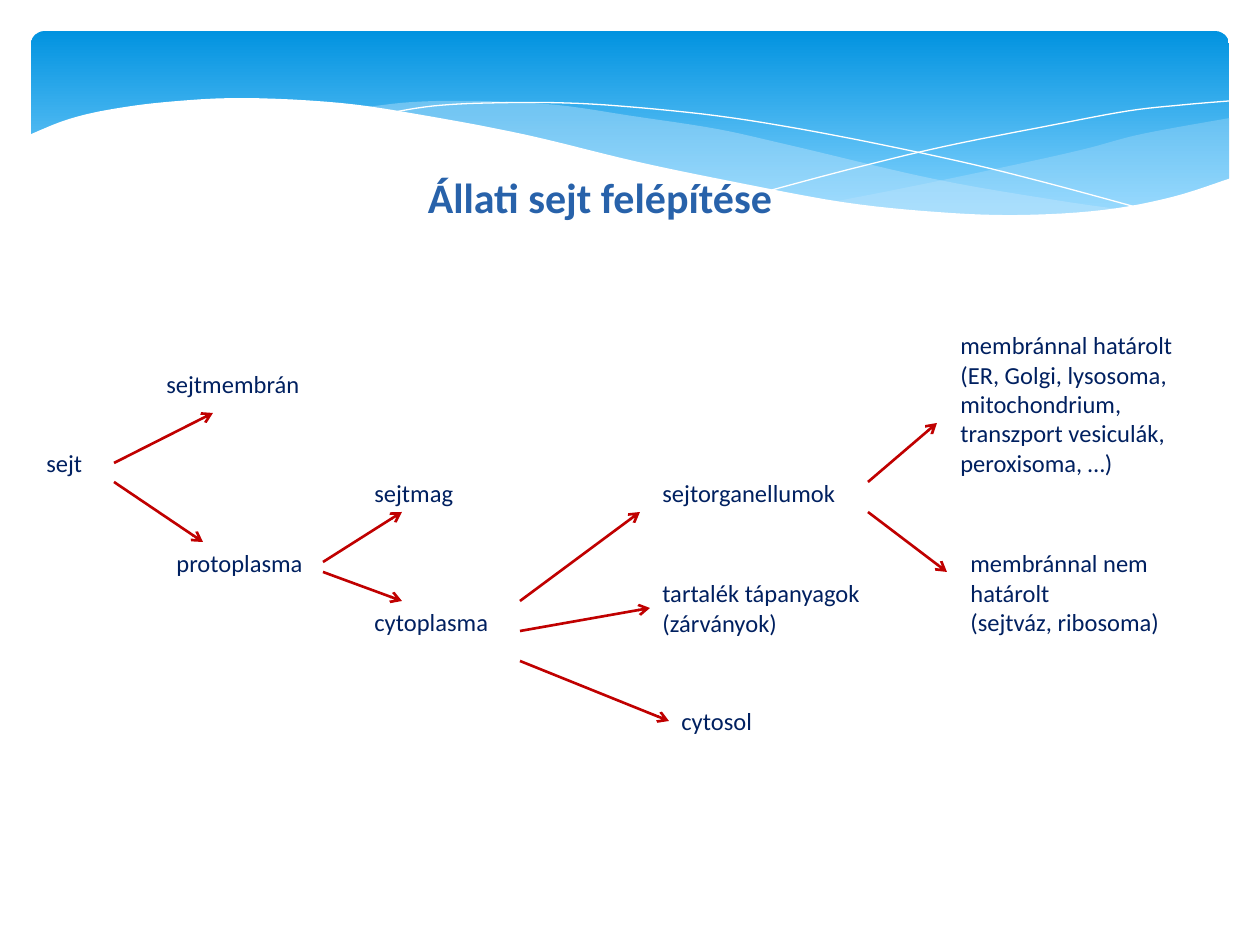
"""Build the slide on the structure of the animal cell."""
from dataclasses import dataclass

from lxml import etree
from pptx import Presentation
from pptx import util as u
from pptx.dml.color import RGBColor
from pptx.enum import shapes, text
from pptx.oxml.ns import qn


@dataclass(frozen=True)
class Theme:
    font: str = "Calibri"
    title_size: int = 24
    label_size: int = 14
    title: str = "2862AA"
    label: str = "002060"
    arrow: str = "C00000"
    arrow_width: float = 1.5
    band_top: str = "0293E0"
    band_bottom: str = "83D3FE"
    wave: str = "C6E7FC"
    white: str = "FFFFFF"


THEME = Theme()
PX = 914400 / 126
SLIDE = (1260, 945)
BAND = (31, 31, 1198, 197)

WAVES = [
    (THEME.wave, 29, [
        [(1230, 118), (1142, 134), (1085, 149), (1014, 165), (919, 185), (833, 202)],
        [(833, 202), (905, 211), (969, 215), (1026, 217), (1087, 214), (1140, 205),
         (1187, 194), (1230, 178)],
    ]),
    (THEME.wave, 40, [
        [(1125, 210), (1055, 200), (934, 179), (793, 146), (717, 129), (632, 116),
         (557, 105), (479, 101), (413, 102), (360, 108)],
        [(360, 108), (431, 118), (509, 134), (566, 146), (668, 170), (757, 189),
         (838, 203), (910, 212), (989, 217), (1056, 217), (1125, 210)],
    ]),
    (None, 100, [
        [(389, 113), (433, 106), (488, 103), (567, 103), (643, 108), (733, 118),
         (838, 136), (958, 161), (1047, 183), (1143, 209)],
    ]),
    (None, 100, [
        [(772, 190), (847, 170), (942, 147), (1053, 125), (1128, 111), (1182, 105),
         (1229, 101)],
    ]),
    (THEME.white, 100, [
        [(1231, 178), (1172, 197), (1103, 210), (1019, 215), (937, 212), (842, 202),
         (730, 181), (634, 161), (527, 135), (428, 116), (341, 103), (243, 98),
         (166, 102), (107, 110), (66, 120), (29, 135)],
        [(29, 282), (1231, 282)],
    ]),
]

TITLE = ("Állati sejt felépítése", (302, 165, 596, 64))

LABELS = [
    ("sejt", (34, 442, 89, 42)),
    ("sejtmembrán", (154, 363, 179, 42)),
    ("protoplasma", (164, 542, 169, 42)),
    ("sejtmag", (362, 472, 149, 42)),
    ("cytoplasma", (362, 601, 159, 42)),
    ("sejtorganellumok", (650, 472, 218, 42)),
    ("tartalék tápanyagok (zárványok)", (650, 572, 277, 72)),
    ("cytosol", (669, 700, 139, 42)),
    ("membránnal határolt\n(ER, Golgi, lysosoma, mitochondrium, transzport vesiculák, "
     "peroxisoma, …)", (948, 324, 258, 161)),
    ("membránnal nem határolt\n(sejtváz, ribosoma)", (958, 542, 268, 102)),
]

ARROWS = [
    ((114, 463), (213, 413)),
    ((520, 661), "cytosol"),
    ((520, 631), "tartalék tápanyagok (zárványok)"),
    ((520, 601), (640, 512)),
    ((868, 512), (947, 572)),
    ((868, 482), (937, 423)),
    ((323, 572), (402, 601)),
    ((323, 562), (402, 512)),
    ((114, 482), (203, 542)),
]


def emu(values):
    return [round(v * PX) for v in values]


def rgb(value):
    return RGBColor.from_string(value)


def smooth(points, steps=6):
    """Return points along a Catmull-Rom curve through the given points."""
    ends = [points[0], *points, points[-1]]
    curve = [points[0]]
    for a, b, c, d in zip(ends, ends[1:], ends[2:], ends[3:]):
        for t in (i / steps for i in range(1, steps + 1)):
            curve.append(tuple(
                0.5 * (2 * q + (r - p) * t + (2 * p - 5 * q + 4 * r - s) * t ** 2
                       + (3 * q - p - 3 * r + s) * t ** 3)
                for p, q, r, s in zip(a, b, c, d)))
    return curve


def add_band(slide):
    sp = slide.shapes.add_shape(shapes.MSO_SHAPE.ROUNDED_RECTANGLE, *emu(BAND))
    sp.adjustments[0] = 0.07
    sp.shadow.inherit = False
    sp.line.fill.background()
    sp.fill.gradient()
    sp.fill.gradient_angle = 270
    stops = [(0, THEME.band_top), (0.9, THEME.band_bottom)]
    for stop, (position, color) in zip(sp.fill.gradient_stops, stops):
        stop.position = position
        stop.color.rgb = rgb(color)


def add_wave(slide, color, opacity, edges):
    points = [emu(point) for edge in edges for point in smooth(edge)]
    builder = slide.shapes.build_freeform(*points[0])
    builder.add_line_segments(points[1:], close=color is not None)
    sp = builder.convert_to_shape()
    sp.shadow.inherit = False
    if color is None:
        sp.fill.background()
        sp.line.color.rgb = rgb(THEME.white)
        sp.line.width = u.Pt(0)
        return
    sp.line.fill.background()
    sp.fill.solid()
    sp.fill.fore_color.rgb = rgb(color)
    if opacity < 100:
        clr = sp.fill._xPr.find(qn("a:solidFill"))[0]
        etree.SubElement(clr, qn("a:alpha"), val=str(opacity * 1000))


def add_label(slide, words, box, size, color, bold=False, align=text.PP_ALIGN.LEFT):
    sp = slide.shapes.add_textbox(*emu(box))
    tf = sp.text_frame
    tf.word_wrap = True
    tf.auto_size = text.MSO_AUTO_SIZE.SHAPE_TO_FIT_TEXT
    tf.text = words
    for p in tf.paragraphs:
        p.alignment = align
        p.font.name = THEME.font
        p.font.size = u.Pt(size)
        p.font.bold = bold
        p.font.color.rgb = rgb(color)
    return sp


def add_arrow(slide, start, end, labels):
    target = labels.get(end) if isinstance(end, str) else None
    stop = start if target is not None else end
    cxn = slide.shapes.add_connector(shapes.MSO_CONNECTOR.STRAIGHT, *emu(start + stop))
    if target is not None:
        cxn.end_connect(target, 1)
    cxn.line.color.rgb = rgb(THEME.arrow)
    cxn.line.width = u.Pt(THEME.arrow_width)
    etree.SubElement(cxn.line._get_or_add_ln(), qn("a:tailEnd"), type="arrow")
    etree.SubElement(cxn._element.spPr, qn("a:effectLst"))


def main():
    prs = Presentation()
    prs.slide_width, prs.slide_height = emu(SLIDE)
    slide = prs.slides.add_slide(prs.slide_layouts[6])
    add_band(slide)
    for wave in WAVES:
        add_wave(slide, *wave)
    add_label(slide, *TITLE, THEME.title_size, THEME.title, True, text.PP_ALIGN.CENTER)
    labels = {words: add_label(slide, words, box, THEME.label_size, THEME.label)
              for words, box in LABELS}
    for start, end in ARROWS:
        add_arrow(slide, start, end, labels)
    prs.save("out.pptx")


if __name__ == "__main__":
    main()
